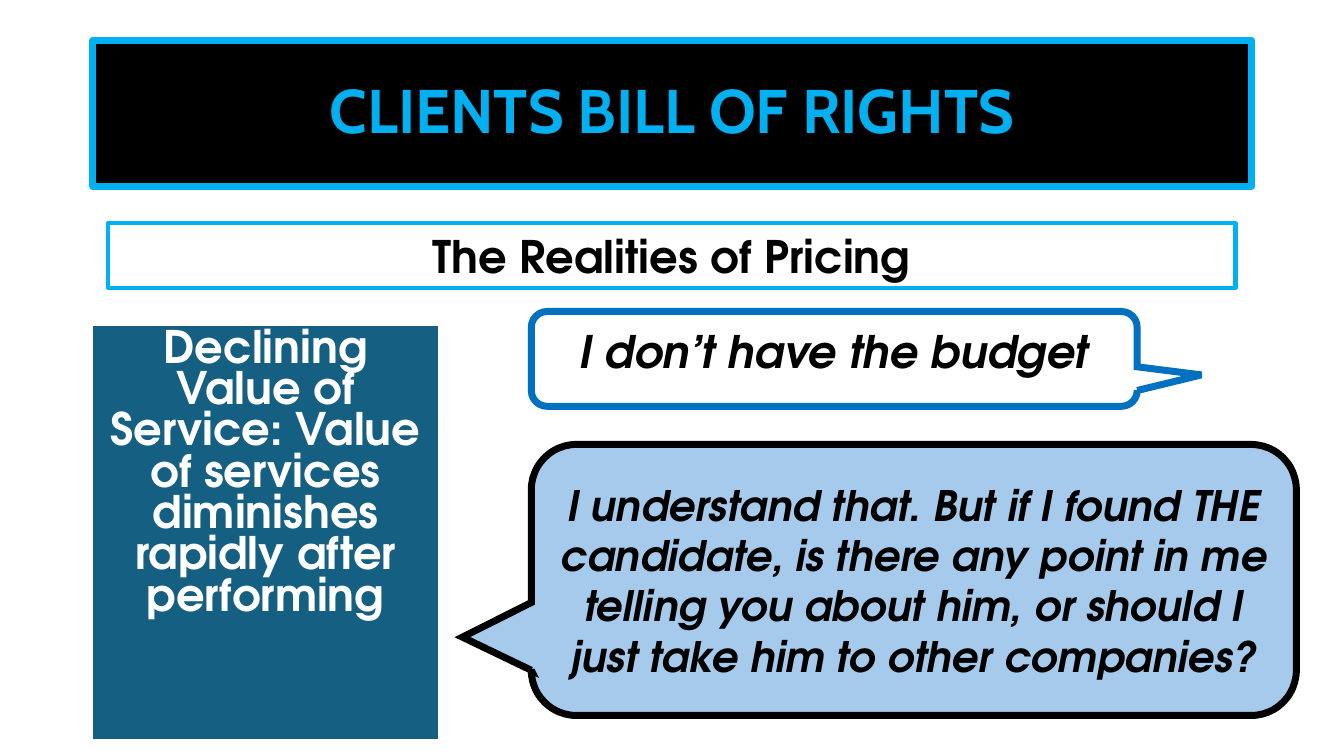
from dataclasses import dataclass

from lxml import etree
from pptx import Presentation
from pptx.dml.color import RGBColor
from pptx.enum.shapes import MSO_SHAPE
from pptx.enum.text import MSO_ANCHOR, PP_ALIGN
from pptx.oxml.ns import qn
from pptx.util import Cm, Pt

RECT = MSO_SHAPE.RECTANGLE
CALLOUT = MSO_SHAPE.ROUNDED_RECTANGULAR_CALLOUT
CENTER = PP_ALIGN.CENTER
TOP, MIDDLE = MSO_ANCHOR.TOP, MSO_ANCHOR.MIDDLE


@dataclass(frozen=True)
class Theme:
    """Colours, fonts and type sizes of the slide."""
    black: str = "000000"
    white: str = "FFFFFF"
    sky: str = "00B0F0"
    blue: str = "0070C0"
    pale: str = "A6CAEC"
    teal: str = "156082"
    head_font: str = "Cabin"
    body_font: str = "TeX Gyre Adventor"
    head: int = 44
    body: int = 32
    reply: int = 30
    thick: int = 5
    thin: int = 3


T = Theme()


def rgb(value):
    """Turn a hex string into a colour."""
    return RGBColor.from_string(value)


def write(tf, text, size=T.body, color=T.black, font=T.body_font,
          italic=False, anchor=TOP, spacing=None):
    """Write one bold centred paragraph into a text frame."""
    tf.word_wrap = True
    tf.vertical_anchor = anchor
    p = tf.paragraphs[0]
    p.alignment = CENTER
    if spacing:
        p.line_spacing = spacing
    r = p.add_run()
    r.text = text
    r.font.name = font
    r.font.size = Pt(size)
    r.font.bold = True
    r.font.italic = italic
    r.font.color.rgb = rgb(color)


def add_panel(s, kind, box, line, width, fill=None):
    """Add an outlined shape, filled if a colour is given."""
    sp = s.shapes.add_shape(kind, *map(Cm, box))
    sp.shadow.inherit = False
    if fill:
        sp.fill.solid()
        sp.fill.fore_color.rgb = rgb(fill)
    else:
        sp.fill.background()
    sp.line.color.rgb = rgb(line)
    sp.line.width = Pt(width)
    return sp


def add_title(s, box, text):
    """Add the black title banner."""
    sp = add_panel(s, RECT, box, T.sky, T.thick, T.black)
    write(sp.text_frame, text, T.head, T.sky, T.head_font,
          anchor=MIDDLE, spacing=0.9)


def add_subtitle(s, box, text):
    """Add the outlined subtitle bar."""
    sp = add_panel(s, RECT, box, T.sky, T.thin)
    write(sp.text_frame, text)


def add_value_table(s, box, text):
    """Add the one-cell table with white borders."""
    table = s.shapes.add_table(1, 1, *map(Cm, box)).table
    table.first_row = table.horz_banding = False
    cell = table.cell(0, 0)
    tc_pr = cell._tc.get_or_add_tcPr()
    for side, width in (("L", 1), ("R", 1), ("T", 1), ("B", 3)):
        ln = etree.SubElement(tc_pr, qn(f"a:ln{side}"), w=str(Pt(width)))
        fill = etree.SubElement(ln, qn("a:solidFill"))
        etree.SubElement(fill, qn("a:srgbClr"), val=T.white)
    cell.fill.solid()
    cell.fill.fore_color.rgb = rgb(T.teal)
    write(cell.text_frame, text, color=T.white)


def add_callout(s, box, tail, line, fill=None):
    """Add a speech bubble with its tail at the given offset."""
    sp = add_panel(s, CALLOUT, box, line, T.thick, fill)
    for i, value in enumerate((*tail, 0.167)):
        sp.adjustments[i] = value
    etree.SubElement(sp.line._get_or_add_ln(), qn("a:miter"), lim="800000")
    return sp


def add_objection(s, box, text):
    """Add the client's bubble with a wider text box centred over it."""
    add_callout(s, box, (0.606, 0.169), T.blue)
    x, y, w, h = box
    margin = 0.85
    tb = s.shapes.add_textbox(Cm(x - margin), Cm(y + 0.18),
                              Cm(w + 2 * margin), Cm(1.63))
    write(tb.text_frame, text, italic=True)


def add_reply(s, box, text):
    """Add the filled answer bubble."""
    sp = add_callout(s, box, (-0.59, 0.211), T.black, T.pale)
    write(sp.text_frame, text, T.reply, italic=True, anchor=MIDDLE)


def main():
    """Build and save the slide."""
    prs = Presentation()
    prs.slide_width, prs.slide_height = Cm(33.87), Cm(19.05)
    s = prs.slides.add_slide(prs.slide_layouts[6])
    left, bubble_left = 2.34, 13.39
    add_title(s, (left, 1.02, 29.21, 3.68), "CLIENTS BILL OF RIGHTS")
    add_subtitle(s, (2.72, 5.63, 28.42, 1.62), "The Realities of Pricing")
    add_value_table(s, (left, 8.19, 8.71, 10.49),
                    "Declining Value of Service: Value of services "
                    "diminishes rapidly after performing")
    add_objection(s, (bubble_left, 7.85, 15.27, 2.39),
                  "I don’t have the budget")
    add_reply(s, (bubble_left, 11.2, 19.28, 6.83),
              "I understand that. But if I found THE candidate, is there any "
              "point in me telling you about him, or should I just take him "
              "to other companies?")
    prs.save("out.pptx")


if __name__ == "__main__":
    main()
